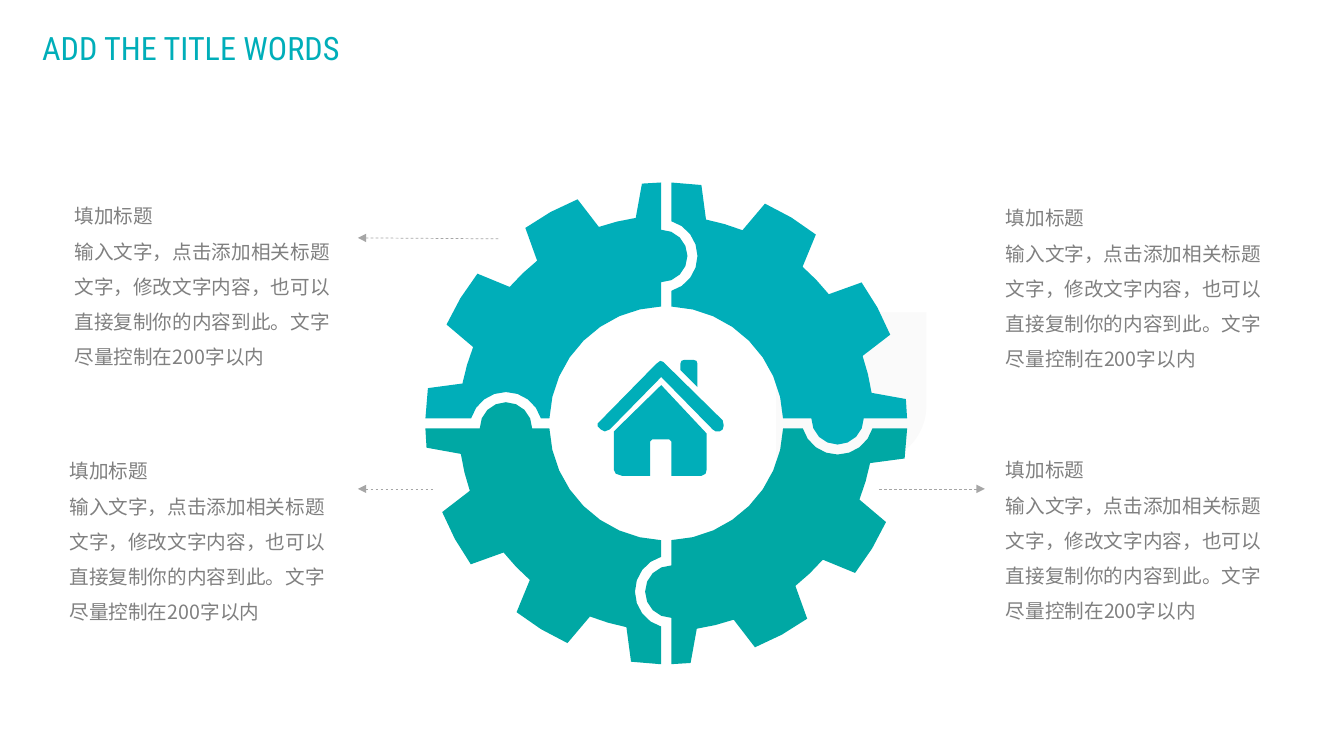
import math
from typing import NamedTuple

import pptx
import pptx.dml.color
import pptx.enum.dml
import pptx.enum.shapes
import pptx.enum.text
import pptx.oxml
import pptx.oxml.ns
import pptx.util
from pptx.util import Inches

TEAL = "00AEB9"
GREEN = "00A8A4"
GREY = "808080"
ARROW_GREY = "A6A6A6"
CHINESE_FONT = "Noto Sans CJK SC"
HEADING = "填加标题"
BODY = "输入文字，点击添加相关标题文字，修改文字内容，也可以直接复制你的内容到此。文字尽量控制在200字以内"

# Gear geometry in inches and degrees; bearings run clockwise from straight up.
CENTER_X, CENTER_Y = 6.61, 4.2
OUTER_RADIUS, ROOT_RADIUS, HOLE_RADIUS = 2.39, 2.06, 1.16
TAB_RADIUS, SOCKET_RADIUS = 0.26, 0.36
HALF_GAP = 0.05
FIRST_TOOTH, TOOTH_STEP = 1.3, 30
TIP_HALF_ANGLE, ROOT_HALF_ANGLE = 7.1, 9.75
KNOB_DISTANCES = [1.66, 1.7, 1.67, 1.59]  # top, right, bottom, left
PIECE_COLORS = [TEAL, GREEN, GREEN, TEAL]  # clockwise from top right

Point = tuple[float, float]


class TextBlock(NamedTuple):
    left: float
    top: float
    width: float
    height: float
    paragraphs: list[str]
    size: int = 14
    font: str = CHINESE_FONT
    color: str = GREY


class Arrow(NamedTuple):
    """A dashed arrow with its head at the tip."""
    tip: Point
    tail: Point


TEXT_BLOCKS = [
    TextBlock(left, top, 2.88, 1.83, [HEADING, BODY])
    for left, top in [(0.64, 1.86), (0.59, 4.39), (9.88, 1.88), (9.88, 4.38)]
] + [TextBlock(0.32, 0.04, 3.36, 0.68, ["ADD THE TITLE WORDS"], 23, "Roboto Condensed", TEAL)]

ARROWS = [
    Arrow((3.55, 2.36), (4.95, 2.37)),
    Arrow((3.55, 4.85), (4.32, 4.85)),
    Arrow((9.77, 4.85), (8.71, 4.85)),
]

CHIMNEY = [(6.92, 3.84), (6.92, 3.61), (6.91, 3.58), (6.88, 3.57),
           (6.79, 3.57), (6.76, 3.58), (6.75, 3.61), (6.75, 3.67)]
ROOF = [(7.17, 4.17), (6.6, 3.61), (6.58, 3.59), (6.55, 3.58), (6.51, 3.61),
        (5.96, 4.17), (5.93, 4.2), (5.93, 4.23), (5.96, 4.26), (6, 4.28),
        (6.05, 4.26), (6.56, 3.74), (7.07, 4.26), (7.1, 4.28), (7.14, 4.28), (7.17, 4.26),
        (7.18, 4.22)]
WALLS = [(6.09, 4.28), (6.09, 4.66), (6.11, 4.7), (6.17, 4.72), (6.45, 4.72), (6.45, 4.38),
         (6.47, 4.36), (6.64, 4.36), (6.66, 4.38), (6.66, 4.72), (6.96, 4.72), (7, 4.7),
         (7.01, 4.66), (7.01, 4.3), (6.56, 3.82)]


def rgb(color: str) -> pptx.dml.color.RGBColor:
    return pptx.dml.color.RGBColor.from_string(color)


def paint(shape, color: str) -> None:
    shape.shadow.inherit = False
    shape.fill.solid()
    shape.fill.fore_color.rgb = rgb(color)
    shape.line.fill.background()


def add_outline(slide, contours: list[list[Point]], color: str) -> None:
    """Draw closed contours as one filled freeform."""
    scaled = [[(Inches(x), Inches(y)) for x, y in contour] for contour in contours]
    builder = slide.shapes.build_freeform(*scaled[0][0])
    builder.add_line_segments(scaled[0][1:])
    for contour in scaled[1:]:
        builder.move_to(*contour[0])
        builder.add_line_segments(contour[1:])
    paint(builder.convert_to_shape(), color)


def arc(x: float, y: float, radius: float, start: float, end: float) -> list[Point]:
    """Points on an arc between two bearings, y up, equally smooth at any radius."""
    steps = math.ceil(abs(end - start) * math.sqrt(radius) / 12)
    bearings = [math.radians(start + (end - start) * i / steps) for i in range(steps + 1)]
    return [(x + radius * math.sin(b), y + radius * math.cos(b)) for b in bearings]


def edge_angle(offset: float, radius: float) -> float:
    return math.degrees(math.asin(offset / radius))


def toothed_rim() -> list[Point]:
    """Quarter rim from the upright edge to the level edge."""
    margin = edge_angle(HALF_GAP, OUTER_RADIUS)
    points = []
    for index in range(4):
        tooth = FIRST_TOOTH + index * TOOTH_STEP
        tip_start = max(margin, tooth - TIP_HALF_ANGLE)
        tip_end = min(90 - margin, tooth + TIP_HALF_ANGLE)
        points += arc(0, 0, OUTER_RADIUS, tip_start, tip_end)
        if index < 3:
            points += arc(0, 0, ROOT_RADIUS, tooth + ROOT_HALF_ANGLE,
                          tooth + TOOTH_STEP - ROOT_HALF_ANGLE)
    return points


def add_gear_piece(slide, quarter: int) -> None:
    socket_distance = KNOB_DISTANCES[quarter]
    tab_distance = KNOB_DISTANCES[(quarter + 1) % 4]
    socket_angle = edge_angle(2 * HALF_GAP, SOCKET_RADIUS)
    hole_angle = edge_angle(HALF_GAP, HOLE_RADIUS)
    points = (
        arc(-HALF_GAP, socket_distance, SOCKET_RADIUS, 180 - socket_angle, socket_angle)
        + toothed_rim()
        + arc(tab_distance, HALF_GAP, TAB_RADIUS, 90, 270)
        + arc(0, 0, HOLE_RADIUS, 90 - hole_angle, hole_angle)
    )
    turn = math.radians(90 * quarter)
    cosine, sine = math.cos(turn), math.sin(turn)
    turned = [(CENTER_X + x * cosine + y * sine, CENTER_Y + x * sine - y * cosine)
              for x, y in points]
    add_outline(slide, [turned], PIECE_COLORS[quarter])


def add_pale_tile(slide) -> None:
    tile = slide.shapes.add_shape(pptx.enum.shapes.MSO_SHAPE.ROUND_2_DIAG_RECTANGLE,
                                  Inches(7.7), Inches(3.1), Inches(1.49), Inches(1.49))
    tile.adjustments[0] = 0.38
    paint(tile, "E0E0E0")
    color = tile.fill._xPr.find(".//" + pptx.oxml.ns.qn("a:srgbClr"))
    alpha = pptx.oxml.parse_xml(f'<a:alpha {pptx.oxml.ns.nsdecls("a")} val="15000"/>')
    color.append(alpha)


def add_arrow(slide, arrow: Arrow) -> None:
    ends = [Inches(value) for value in arrow.tip + arrow.tail]
    connector = slide.shapes.add_connector(pptx.enum.shapes.MSO_CONNECTOR.STRAIGHT, *ends)
    connector.line.color.rgb = rgb(ARROW_GREY)
    connector.line.width = pptx.util.Pt(0.5)
    connector.line.dash_style = pptx.enum.dml.MSO_LINE.DASH
    namespace = pptx.oxml.ns.nsdecls("a")
    head = pptx.oxml.parse_xml(f'<a:headEnd {namespace} type="triangle"/>')
    connector.line._get_or_add_ln().append(head)
    connector._element.spPr.append(pptx.oxml.parse_xml(f"<a:effectLst {namespace}/>"))


def add_text(slide, block: TextBlock) -> None:
    box = slide.shapes.add_textbox(Inches(block.left), Inches(block.top),
                                   Inches(block.width), Inches(block.height))
    frame = box.text_frame
    frame.word_wrap = True
    frame.auto_size = pptx.enum.text.MSO_AUTO_SIZE.SHAPE_TO_FIT_TEXT
    for index, text in enumerate(block.paragraphs):
        paragraph = frame.add_paragraph() if index else frame.paragraphs[0]
        paragraph.line_spacing = 1.5
        run = paragraph.add_run()
        run.text = text
        run.font.size = pptx.util.Pt(block.size)
        run.font.color.rgb = rgb(block.color)
        run.font.name = block.font
        run.font._element.append(pptx.oxml.parse_xml(
            f'<a:ea {pptx.oxml.ns.nsdecls("a")} typeface="{block.font}"/>'))


def main() -> None:
    presentation = pptx.Presentation()
    presentation.slide_width = Inches(40 / 3)
    presentation.slide_height = Inches(7.5)
    slide = presentation.slides.add_slide(presentation.slide_layouts[6])
    add_pale_tile(slide)
    for quarter in range(4):
        add_gear_piece(slide, quarter)
    for arrow in ARROWS:
        add_arrow(slide, arrow)
    add_outline(slide, [CHIMNEY, ROOF, WALLS], TEAL)
    for block in TEXT_BLOCKS:
        add_text(slide, block)
    presentation.save("out.pptx")


if __name__ == "__main__":
    main()
